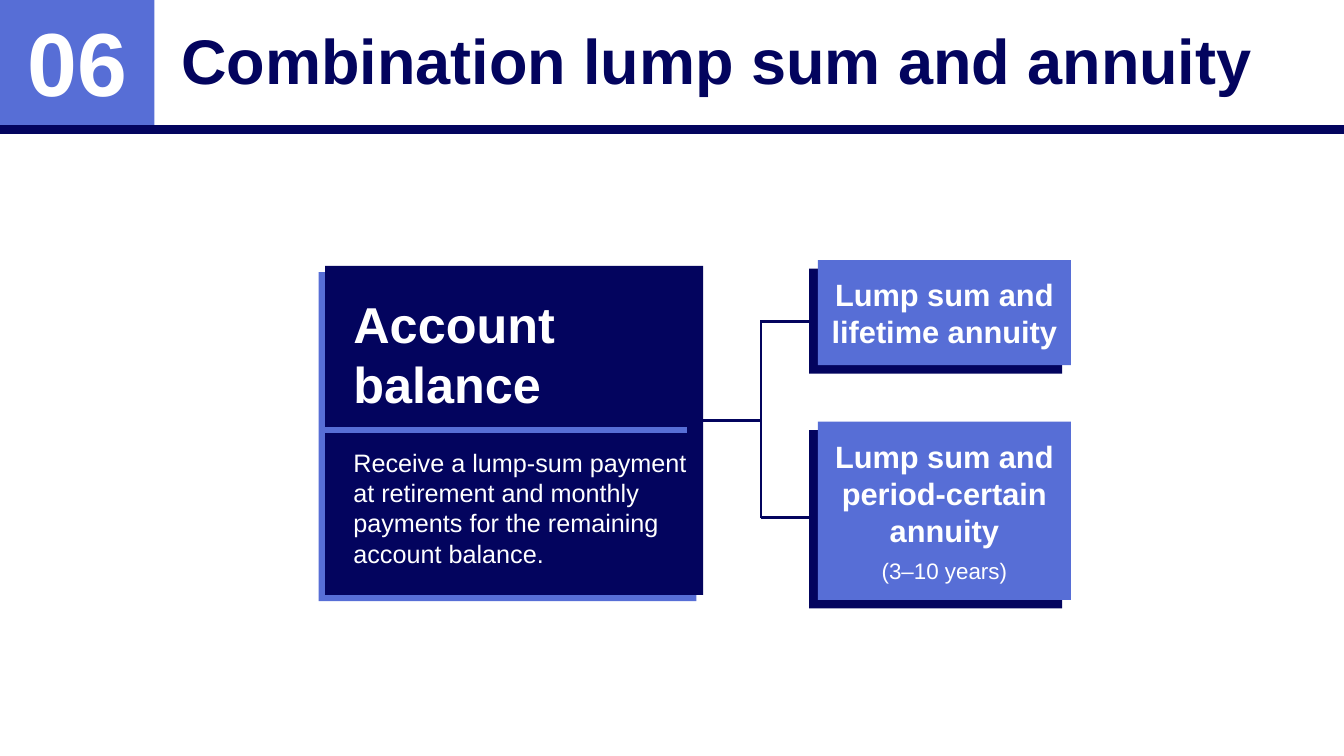
import dataclasses

import pptx
import pptx.dml.color
import pptx.enum.shapes
import pptx.enum.text
import pptx.oxml.ns
import pptx.util

Pt = pptx.util.Pt
Align = pptx.enum.text.PP_ALIGN

NAVY, BLUE, WHITE = "03045E", "576ED6", "FFFFFF"


@dataclasses.dataclass
class Box:
    left: float
    top: float
    width: float
    height: float


@dataclasses.dataclass
class Line:
    text: str
    size: float
    bold: bool = True
    color: str = WHITE
    align: Align = Align.CENTER
    space_after: float = 0
    line_spacing: float = 1.0
    indent: float = 0


@dataclasses.dataclass
class Rule:
    start: tuple[float, float]
    end: tuple[float, float]
    color: str = NAVY
    width: float = 2


@dataclasses.dataclass
class Card:
    front: Box
    fill: str
    shadow_fill: str
    shadow_offset: tuple[float, float]
    lines: list[Line]
    vertical_inset: float


def rgb(color: str) -> pptx.dml.color.RGBColor:
    return pptx.dml.color.RGBColor.from_string(color)


def write(shape, lines: list[Line], vertical_inset: float = 3.6) -> None:
    frame = shape.text_frame
    frame.word_wrap = True
    frame.vertical_anchor = pptx.enum.text.MSO_ANCHOR.MIDDLE
    frame.margin_top = frame.margin_bottom = Pt(vertical_inset)
    frame.text = "\n".join(line.text for line in lines)
    for paragraph, line in zip(frame.paragraphs, lines):
        paragraph.alignment = line.align
        paragraph.line_spacing = line.line_spacing
        paragraph.space_after = Pt(line.space_after)
        if line.indent:
            paragraph._p.get_or_add_pPr().set("marL", str(Pt(line.indent)))
        font = paragraph.runs[0].font
        font.name, font.size, font.bold = "Arial", Pt(line.size), line.bold
        font.color.rgb = rgb(line.color)


def add_box(slide, box: Box, fill: str):
    shape = slide.shapes.add_shape(
        pptx.enum.shapes.MSO_SHAPE.RECTANGLE,
        Pt(box.left), Pt(box.top), Pt(box.width), Pt(box.height))
    shape.shadow.inherit = False
    shape.fill.solid()
    shape.fill.fore_color.rgb = rgb(fill)
    shape.line.fill.background()
    return shape


def add_text(slide, box: Box, line: Line) -> None:
    shape = slide.shapes.add_textbox(
        Pt(box.left), Pt(box.top), Pt(box.width), Pt(box.height))
    write(shape, [line])


def add_rule(slide, rule: Rule) -> None:
    connector = slide.shapes.add_connector(
        pptx.enum.shapes.MSO_CONNECTOR.STRAIGHT,
        *(Pt(value) for value in rule.start + rule.end))
    connector.line.color.rgb = rgb(rule.color)
    connector.line.width = Pt(rule.width)
    properties = connector._element.spPr
    properties.append(properties.makeelement(pptx.oxml.ns.qn("a:effectLst"), {}))


def add_card(slide, card: Card) -> None:
    shift_x, shift_y = card.shadow_offset
    front = card.front
    shadow = dataclasses.replace(
        front, left=front.left + shift_x, top=front.top + shift_y)
    add_box(slide, shadow, card.shadow_fill)
    write(add_box(slide, front, card.fill), card.lines, card.vertical_inset)


def option_card(top: float, height: float, lines: list[Line]) -> Card:
    return Card(Box(584.2, top, 180.7, height), BLUE, NAVY, (-6.2, 6.1), lines, 10.8)


ACCOUNT = Card(
    Box(232.3, 190, 270, 235), NAVY, BLUE, (-4.8, 4.4),
    [Line("Account balance", 36, align=Align.LEFT, space_after=24, indent=13),
     Line("Receive a lump-sum payment at retirement and monthly payments "
          "for the remaining account balance.", 18, bold=False,
          align=Align.LEFT, indent=13)], 3.6)

OPTIONS = [
    option_card(185.8, 75, [Line("Lump sum and lifetime annuity", 22)]),
    option_card(301.2, 127.4, [
        Line("Lump sum and period-certain annuity", 22, space_after=6),
        Line("(3–10 years)", 16, bold=False)]),
]

# Bracket from the account to the two options
TRUNK_X, OPTION_X = 543.6, 578
UPPER_Y, MIDDLE_Y, LOWER_Y = 229.5, 300.2, 369.6
BRACKET = [
    Rule((470, MIDDLE_Y), (TRUNK_X, MIDDLE_Y)),
    Rule((TRUNK_X, UPPER_Y - 0.8), (TRUNK_X, LOWER_Y + 0.5)),
    Rule((TRUNK_X, UPPER_Y), (OPTION_X, UPPER_Y)),
    Rule((TRUNK_X, LOWER_Y), (OPTION_X, LOWER_Y)),
]


def main() -> None:
    presentation = pptx.Presentation()
    presentation.slide_width, presentation.slide_height = Pt(960), Pt(540)
    slide = presentation.slides.add_slide(presentation.slide_layouts[6])

    # Header
    add_box(slide, Box(0, 0, 110.3, 92.8), BLUE)
    add_text(slide, Box(12, 13.6, 86.4, 69), Line("06", 64, line_spacing=0.9))
    add_rule(slide, Rule((0, 92.6), (960, 92.6), width=6))
    add_text(slide, Box(122.4, 0.7, 825, 92.8),
             Line("Combination lump sum and annuity", 45, color=NAVY,
                  align=Align.LEFT, line_spacing=0.8))

    # Diagram
    for rule in BRACKET:
        add_rule(slide, rule)
    add_card(slide, ACCOUNT)
    add_rule(slide, Rule((232.3, 307.2), (490.5, 307.2), BLUE, 4))
    for option in OPTIONS:
        add_card(slide, option)

    presentation.save("out.pptx")


if __name__ == "__main__":
    main()
